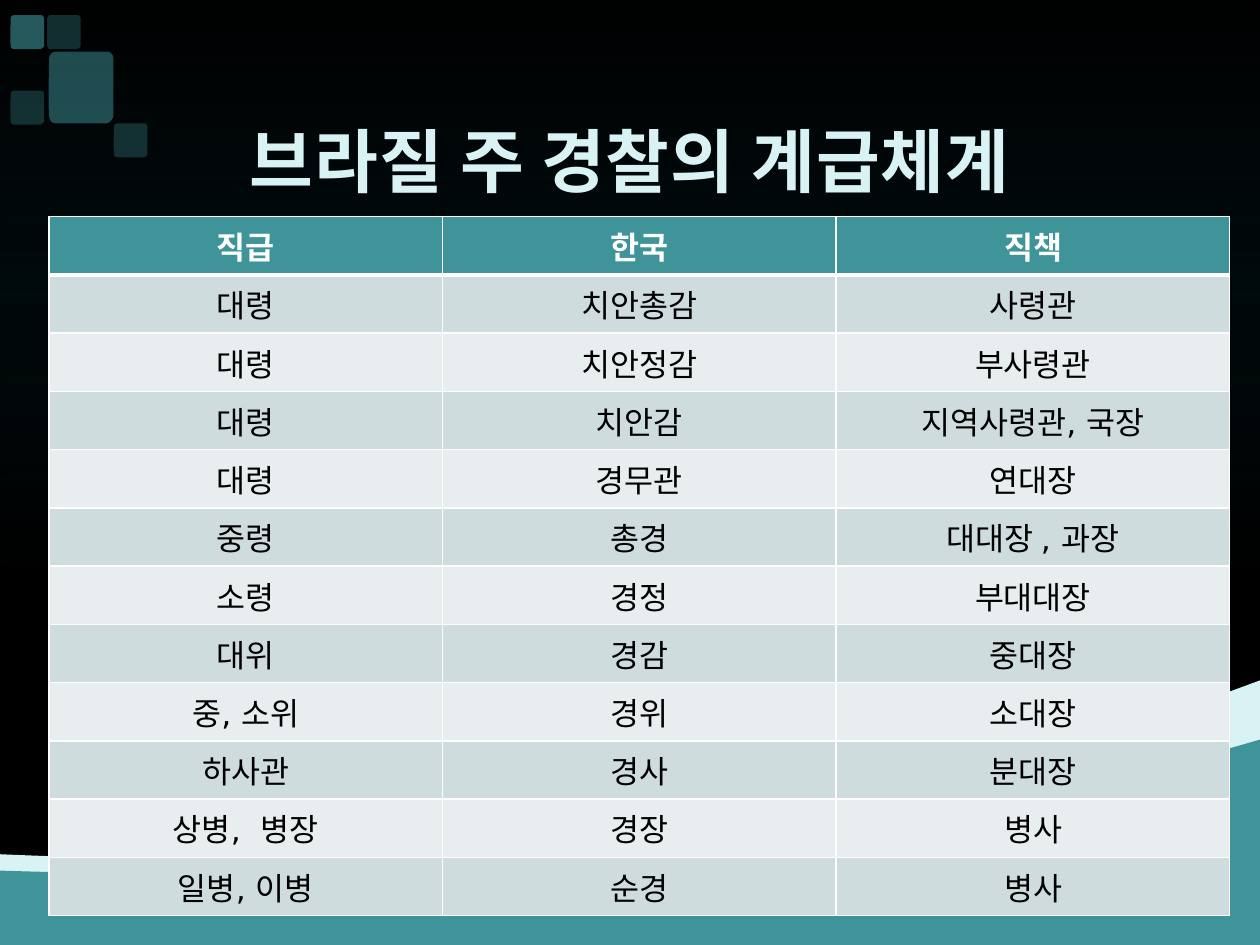
from lxml import etree
from pptx import Presentation
from pptx.dml.color import RGBColor
from pptx.enum.shapes import MSO_SHAPE
from pptx.enum.text import MSO_ANCHOR, MSO_AUTO_SIZE, PP_ALIGN
from pptx.oxml import parse_xml
from pptx.oxml.ns import nsdecls, qn
from pptx.util import Inches, Pt

TEAL, PALE, WHITE, BLACK = "3F949A", "D9F3F4", "FFFFFF", "000000"
BANDS = ("CFDCDE", "E8EEEF")

TITLE = "브라질 주 경찰의 계급체계"
RANKS = [
    ("직급", "한국", "직책"),
    ("대령", "치안총감", "사령관"),
    ("대령", "치안정감", "부사령관"),
    ("대령", "치안감", "지역사령관, 국장"),
    ("대령", "경무관", "연대장"),
    ("중령", "총경", "대대장 , 과장"),
    ("소령", "경정", "부대대장"),
    ("대위", "경감", "중대장"),
    ("중, 소위", "경위", "소대장"),
    ("하사관", "경사", "분대장"),
    ("상병,  병장", "경장", "병사"),
    ("일병, 이병", "순경", "병사"),
]

# Outlines: a start point, then curves (3 points each), then straight corners
WAVES = [
    (PALE, (0, 6.78), [((1.61, 6.85), (2.93, 6.82), (5.21, 6.59)),
                       ((7.49, 6.36), (9.48, 5.59), (10, 5.4))]),
    (TEAL, (0, 6.91), [((2.46, 6.99), (4.45, 6.86), (6.15, 6.68)),
                       ((7.84, 6.49), (9.59, 5.99), (10, 5.87))]),
]
WAVE_CORNERS = [(10, 7.51), (0, 7.51)]
# One rounded tile, as fractions of its width and height
TILE_START = (0.12, 1)
TILE = [((0.12, 1), (0.51, 1), (0.9, 1)), ((0.98, 0.98), (1, 0.9), (1, 0.9)),
        ((1, 0.9), (1, 0.5), (1, 0.11)), ((1, 0), (0.91, 0), (0.91, 0)),
        ((0.91, 0), (0.51, 0), (0.12, 0)), ((0.02, 0), (0.02, 0.1), (0.02, 0.1)),
        ((0.02, 0.1), (0, 0.75), (0.02, 0.9)), ((0.02, 0.9), (0.02, 1), (0.12, 1))]
# left, top, width, height, opacity in percent
TILES = [(0.37, 0.12, 0.27, 0.27, 30), (0.08, 0.72, 0.27, 0.27, 30),
         (0.08, 0.12, 0.27, 0.27, 60), (0.9, 0.98, 0.27, 0.27, 30),
         (0.38, 0.41, 0.52, 0.57, 50)]


def rgb(color):
    return RGBColor.from_string(color)


def write(tf, text, size, font, color, bold=False):
    p = tf.paragraphs[0]
    p.alignment = PP_ALIGN.CENTER
    r = p.add_run()
    r.text = text
    r.font.size, r.font.name, r.font.bold = Pt(size), font, bold
    r.font.color.rgb = rgb(color)
    return r


def add_outline(s, start, curves, corners, color, opacity=100):
    """Add a filled freeform; each curve's three points become one Bezier."""
    points = [start, *(pt for curve in curves for pt in curve), *corners]
    points = [(Inches(x), Inches(y)) for x, y in points]
    builder = s.shapes.build_freeform(*points[0], scale=1.0)
    builder.add_line_segments(points[1:], close=True)
    sp = builder.convert_to_shape()
    lines = list(sp._element.iter(qn("a:lnTo")))
    for i in range(len(curves)):
        trio = lines[3 * i:3 * i + 3]
        bezier = etree.Element(qn("a:cubicBezTo"))
        trio[0].addprevious(bezier)
        for line in trio:
            bezier.append(line[0])
            line.getparent().remove(line)
    sp.shadow.inherit = False
    sp.line.fill.background()
    sp.fill.solid()
    sp.fill.fore_color.rgb = rgb(color)
    if opacity < 100:
        clr = sp._element.spPr.find(qn("a:solidFill"))[0]
        etree.SubElement(clr, qn("a:alpha")).set("val", str(opacity * 1000))


def add_backdrop(s, width, height):
    s.background.fill.solid()
    s.background.fill.fore_color.rgb = rgb(BLACK)
    sp = s.shapes.add_shape(MSO_SHAPE.RECTANGLE, 0, 0, width, height)
    sp.shadow.inherit = False
    sp.line.fill.background()
    stops = "".join(
        f'<a:gs pos="{pos * 1000}"><a:srgbClr val="{color}">'
        f'<a:alpha val="{opacity * 1000}"/></a:srgbClr></a:gs>'
        for pos, color, opacity in ((0, "005466", 0), (61, BLACK, 40)))
    sp._element.spPr.find(qn("a:prstGeom")).addnext(parse_xml(
        f'<a:gradFill {nsdecls("a")}><a:gsLst>{stops}</a:gsLst>'
        '<a:lin ang="5400000" scaled="0"/></a:gradFill>'))


def set_borders(cell, **widths):
    tcPr = cell._tc.get_or_add_tcPr()
    for side in "LRTB":
        tcPr.append(parse_xml(
            f'<a:ln{side} {nsdecls("a")} w="{Pt(widths.get(side, 1))}"><a:solidFill>'
            f'<a:srgbClr val="{WHITE}"/></a:solidFill></a:ln{side}>'))


def add_rank_table(s):
    rows, cols = len(RANKS), len(RANKS[0])
    table = s.shapes.add_table(rows, cols, Inches(0.39), Inches(1.72),
                               Inches(9.37), Inches(5.47)).table
    for i, row in enumerate(RANKS):
        header = i == 0
        for j, text in enumerate(row):
            cell = table.cell(i, j)
            set_borders(cell, B=3 if header else 1, T=3 if i == 1 else 1)
            cell.fill.solid()
            cell.fill.fore_color.rgb = rgb(TEAL if header else BANDS[(i - 1) % 2])
            write(cell.text_frame, text, 18, "DejaVu Sans",
                  WHITE if header else BLACK, bold=header)


def main():
    prs = Presentation()
    prs.slide_width, prs.slide_height = Inches(10), Inches(7.5)
    s = prs.slides.add_slide(prs.slide_layouts[5])

    add_backdrop(s, prs.slide_width, prs.slide_height)
    for color, start, curves in WAVES:
        add_outline(s, start, curves, WAVE_CORNERS, color)
    for x, y, w, h, opacity in TILES:
        def place(pt):
            return x + w * pt[0], y + h * pt[1]
        curves = [tuple(map(place, curve)) for curve in TILE]
        add_outline(s, place(TILE_START), curves, [], TEAL, opacity)
    add_rank_table(s)

    title = s.shapes.title
    title.left, title.top = Inches(0.5), Inches(1.25)
    title.width, title.height = Inches(9), Inches(0.55)
    tf = title.text_frame
    tf.auto_size = MSO_AUTO_SIZE.NONE
    tf.vertical_anchor = MSO_ANCHOR.BOTTOM
    tf.margin_top, tf.margin_bottom = 0, Inches(0.2)
    r = write(tf, TITLE, 39.6, "Cambria", PALE, bold=True)
    r.font._element.set("spc", "50")
    s.shapes._spTree.append(title._element)  # bring to front

    prs.save("out.pptx")


if __name__ == "__main__":
    main()
